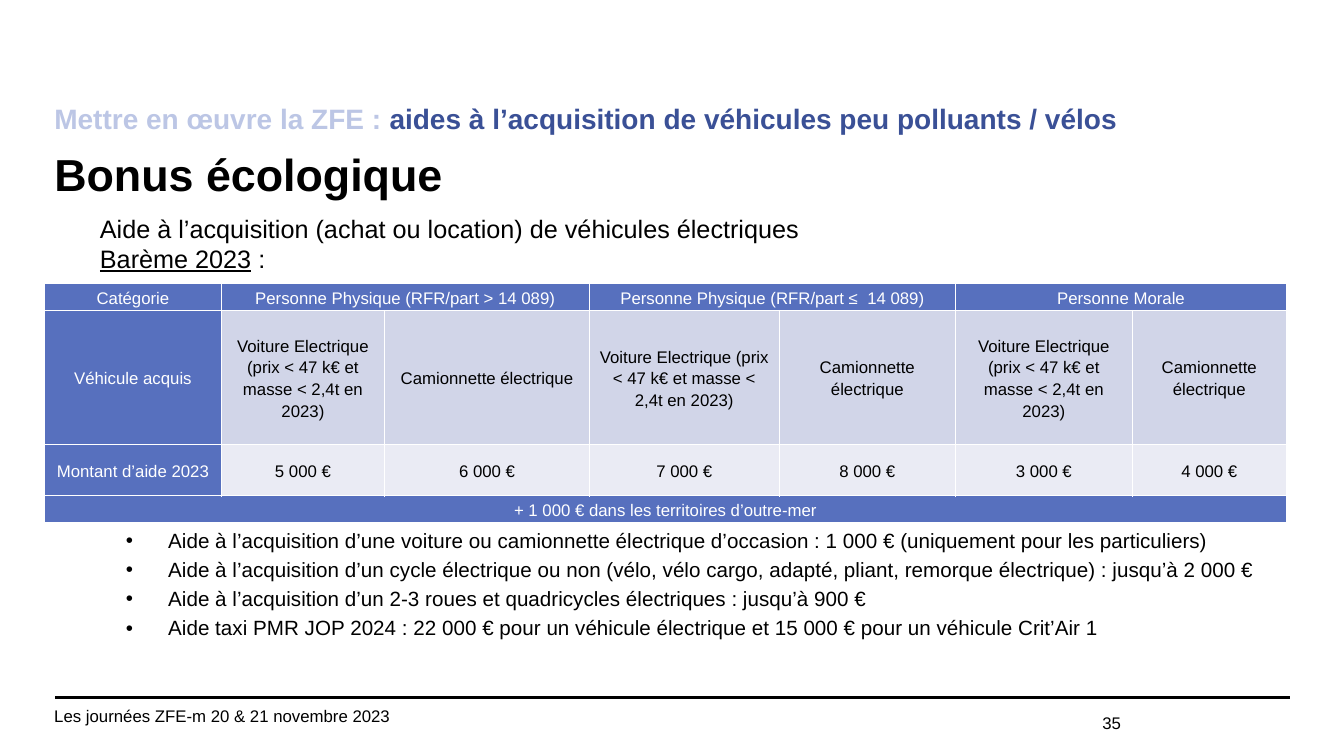
from lxml import etree
from pptx import Presentation
from pptx import util as u
from pptx.dml.color import RGBColor
from pptx.enum import shapes, text
from pptx.oxml.ns import qn

FONT = "Arial"
BLACK, WHITE = "000000", "FFFFFF"
PALE_BLUE, DARK_BLUE = "BCC6E5", "3A5096"
HEADER_FILL, VEHICLE_FILL, AMOUNT_FILL = "5770BE", "D1D5E8", "EAEBF4"

SLIDE_WIDTH, SLIDE_HEIGHT = u.Inches(13.33), u.Inches(7.5)

CAR = "Voiture Electrique (prix < 47 k€ et masse < 2,4t en 2023)"
VAN = "Camionnette électrique"
BUYERS = ["Personne Physique (RFR/part > 14 089)",
          "Personne Physique (RFR/part ≤  14 089)",
          "Personne Morale"]
AMOUNTS = ["5 000 €", "6 000 €", "7 000 €", "8 000 €", "3 000 €", "4 000 €"]
OVERSEAS = "+ 1 000 € dans les territoires d’outre-mer"
COLUMN_SHARES = [1.75, 1.62, 2.03, 1.88, 1.75, 1.75, 1.53]
ROW_SHARES = [0.27, 1.33, 0.51, 0.26]

OTHER_AIDS = [
    "Aide à l’acquisition d’une voiture ou camionnette électrique d’occasion : "
    "1 000 € (uniquement pour les particuliers)",
    "Aide à l’acquisition d’un cycle électrique ou non (vélo, vélo cargo, adapté, "
    "pliant, remorque électrique) : jusqu’à 2 000 €",
    "Aide à l’acquisition d’un 2-3 roues et quadricycles électriques : jusqu’à 900 €",
    "Aide taxi PMR JOP 2024 : 22 000 € pour un véhicule électrique et 15 000 € "
    "pour un véhicule Crit’Air 1",
]


def color(value):
    return RGBColor.from_string(value)


def to_slide(left, top, width, height):
    """Turn a box in percent of the slide into slide lengths."""
    return (int(SLIDE_WIDTH * left / 100), int(SLIDE_HEIGHT * top / 100),
            int(SLIDE_WIDTH * width / 100), int(SLIDE_HEIGHT * height / 100))


def set_font(font, size, value=BLACK, bold=False):
    font.name, font.size, font.bold = FONT, u.Pt(size), bold
    font.color.rgb = color(value)


def add_text_frame(slide, box, anchor=text.MSO_ANCHOR.TOP):
    frame = slide.shapes.add_textbox(*to_slide(*box)).text_frame
    frame.word_wrap = True
    frame.vertical_anchor = anchor
    return frame


def add_line_of_text(slide, box, content, size, bold=False,
                     align=text.PP_ALIGN.LEFT, anchor=text.MSO_ANCHOR.MIDDLE):
    paragraph = add_text_frame(slide, box, anchor).paragraphs[0]
    paragraph.text = content
    paragraph.alignment = align
    set_font(paragraph.font, size, bold=bold)
    return paragraph


def add_title(slide, box):
    paragraph = add_text_frame(slide, box, text.MSO_ANCHOR.MIDDLE).paragraphs[0]
    paragraph.line_spacing = 0.9
    for content, value in (
            ("Mettre en œuvre la ZFE : ", PALE_BLUE),
            ("aides à l’acquisition de véhicules peu polluants / vélos", DARK_BLUE)):
        run = paragraph.add_run()
        run.text = content
        set_font(run.font, 20, value, bold=True)


def add_heading(slide, box):
    paragraph = add_line_of_text(slide, box, "Bonus écologique", 32, bold=True,
                                 anchor=text.MSO_ANCHOR.BOTTOM)
    paragraph.line_spacing = 0.9


def add_introduction(slide, box):
    frame = add_text_frame(slide, box)
    purpose, scale = frame.paragraphs[0], frame.add_paragraph()
    purpose.text = "Aide à l’acquisition (achat ou location) de véhicules électriques"
    label, colon = scale.add_run(), scale.add_run()
    label.text, colon.text = "Barème 2023", " :"
    label.font.underline = True
    for paragraph in (purpose, scale):
        set_font(paragraph.font, 18)


def fill_cell(cell, content, fill, value):
    cell.fill.solid()
    cell.fill.fore_color.rgb = color(fill)
    cell.vertical_anchor = text.MSO_ANCHOR.MIDDLE
    cell.margin_left = cell.margin_right = u.Inches(0.1)
    cell.margin_top = cell.margin_bottom = 0
    paragraph = cell.text_frame.paragraphs[0]
    paragraph.text = content
    paragraph.alignment = text.PP_ALIGN.CENTER
    paragraph.line_spacing = 1.15
    set_font(paragraph.font, 12, value)


def add_cell_borders(cell):
    properties = cell._tc.get_or_add_tcPr()
    for position, side in enumerate(("a:lnL", "a:lnR", "a:lnT", "a:lnB")):
        line = etree.Element(qn(side), w=str(u.Pt(1)))
        fill = etree.SubElement(line, qn("a:solidFill"))
        etree.SubElement(fill, qn("a:srgbClr"), val=WHITE)
        properties.insert(position, line)


def add_bonus_table(slide, box):
    left, top, width, height = to_slide(*box)
    table = slide.shapes.add_table(len(ROW_SHARES), len(COLUMN_SHARES),
                                   left, top, width, height).table
    for column, share in zip(table.columns, COLUMN_SHARES):
        column.width = int(width * share / sum(COLUMN_SHARES))
    for row, share in zip(table.rows, ROW_SHARES):
        row.height = int(height * share / sum(ROW_SHARES))

    last = len(COLUMN_SHARES) - 1
    buyer_cells = [part for buyer in BUYERS for part in (buyer, "")]
    rows = [
        (["Catégorie"] + buyer_cells, HEADER_FILL),
        (["Véhicule acquis"] + [CAR, VAN] * len(BUYERS), VEHICLE_FILL),
        (["Montant d’aide 2023"] + AMOUNTS, AMOUNT_FILL),
        ([OVERSEAS] + [""] * last, HEADER_FILL),
    ]
    for row, (contents, row_fill) in enumerate(rows):
        for column, content in enumerate(contents):
            fill = row_fill if column else HEADER_FILL
            value = WHITE if fill == HEADER_FILL else BLACK
            cell = table.cell(row, column)
            fill_cell(cell, content, fill, value)
            add_cell_borders(cell)
    for column in range(1, last, 2):
        table.cell(0, column).merge(table.cell(0, column + 1))
    table.cell(3, 0).merge(table.cell(3, last))


def add_other_aids(slide, box):
    frame = add_text_frame(slide, box)
    for index, aid in enumerate(OTHER_AIDS):
        paragraph = frame.add_paragraph() if index else frame.paragraphs[0]
        paragraph.text = aid
        paragraph.line_spacing = 0.9
        if index:
            paragraph.space_before = u.Pt(5)
        properties = paragraph._p.get_or_add_pPr()
        properties.set("marL", str(u.Inches(1.05)))
        properties.set("indent", str(u.Inches(-0.42)))
        etree.SubElement(properties, qn("a:buFont"), typeface=FONT)
        etree.SubElement(properties, qn("a:buChar"), char="•")
        set_font(paragraph.font, 14.7)


def add_footer_rule(slide, box):
    left, top, width, height = to_slide(*box)
    rule = slide.shapes.add_connector(shapes.MSO_CONNECTOR.STRAIGHT,
                                      left, top, left + width, top + height)
    rule.line.color.rgb = color(BLACK)
    rule.line.width = u.Pt(1.5)
    etree.SubElement(rule._element.spPr, qn("a:effectLst"))


def add_bonus_slide(presentation):
    slide = presentation.slides.add_slide(presentation.slide_layouts[6])
    add_footer_rule(slide, (4.13, 92.27, 91.82, 0))
    add_line_of_text(slide, (3.3, 92, 28.1, 5.33),
                     "Les journées ZFE-m 20 & 21 novembre 2023", 12)
    add_line_of_text(slide, (78.3, 92.93, 5.85, 5.33), "35", 12,
                     align=text.PP_ALIGN.RIGHT)
    add_title(slide, (3.3, 13.2, 93.5, 5.33))
    add_heading(slide, (3.3, 16.13, 95.4, 11.07))
    add_introduction(slide, (6.7, 27.5, 89.4, 9.3))
    add_bonus_table(slide, (3.33, 37.47, 92.4, 31.6))
    add_other_aids(slide, (3.9, 69.5, 92.1, 17.3))


def main():
    presentation = Presentation()
    presentation.slide_width, presentation.slide_height = SLIDE_WIDTH, SLIDE_HEIGHT
    add_bonus_slide(presentation)
    presentation.save("out.pptx")


if __name__ == "__main__":
    main()
